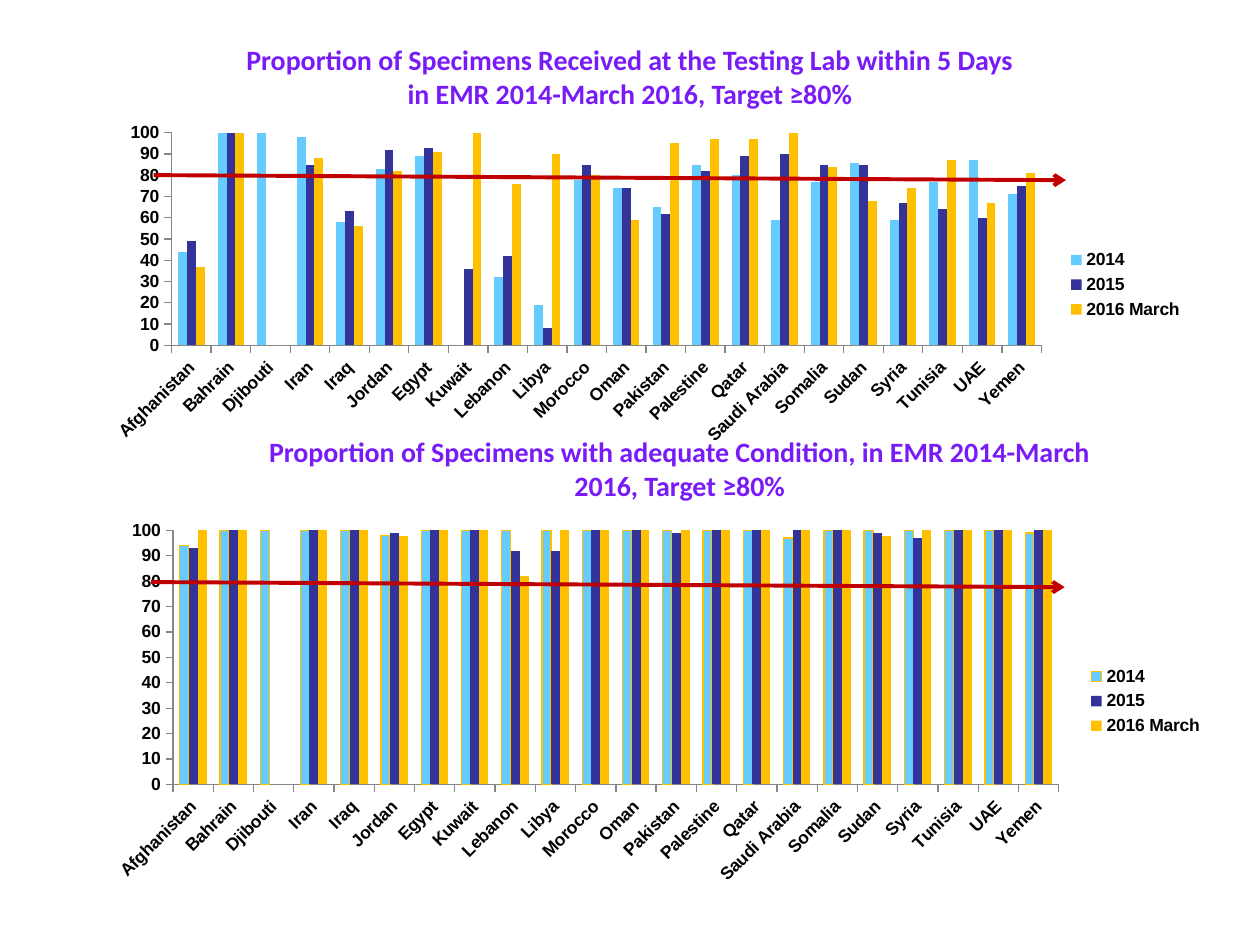
from lxml import etree
from pptx import Presentation
from pptx.chart.data import CategoryChartData
from pptx.dml.color import RGBColor
from pptx.enum.chart import XL_CHART_TYPE, XL_LEGEND_POSITION, XL_TICK_MARK
from pptx.enum.shapes import MSO_CONNECTOR
from pptx.enum.text import MSO_ANCHOR, PP_ALIGN
from pptx.oxml import parse_xml
from pptx.oxml.ns import nsdecls, qn
from pptx.util import Inches, Pt

COUNTRIES = ["Afghanistan", "Bahrain", "Djibouti", "Iran", "Iraq", "Jordan", "Egypt", "Kuwait",
             "Lebanon", "Libya", "Morocco", "Oman", "Pakistan", "Palestine", "Qatar",
             "Saudi Arabia", "Somalia", "Sudan", "Syria", "Tunisia", "UAE", "Yemen"]
YEARS = {"2014": "66CCFF", "2015": "333399", "2016 March": "FFC000"}
PURPLE, RED, GREY = "791BF7", "C00000", "868686"

# Boxes are left, top, width, height in inches; plots are shares of the chart.
PANELS = [
    dict(
        title=["Proportion of Specimens Received at the Testing Lab within 5 Days",
               "in EMR 2014-March 2016, Target ≥80%"],
        title_box=(0.5, 0.3, 9, 0.61), anchor=MSO_ANCHOR.MIDDLE,
        chart_box=(0.75, 0.92, 8.74, 2.68), plot=(0.07, 0.05, 0.79, 0.63),
        target=(1.22, 1.39, 8.46, 1.43), outline=None,
        values=[
            [44, 100, 100, 98, 58, 83, 89, None, 32, 19, 78,
             74, 65, 85, 80, 59, 77, 86, 59, 77, 87, 71],
            [49, 100, None, 85, 63, 92, 93, 36, 42, 8, 85,
             74, 62, 82, 89, 90, 85, 85, 67, 64, 60, 75],
            [37, 100, None, 88, 56, 82, 91, 100, 76, 90, 80,
             59, 95, 97, 97, 100, 84, 68, 74, 87, 67, 81],
        ]),
    dict(
        title=["Proportion of Specimens with adequate Condition, in EMR 2014-March 2016, Target ≥80%"],
        title_box=(1.93, 3.4, 6.93, 0.91), anchor=MSO_ANCHOR.TOP,
        chart_box=(0.75, 4.06, 8.9, 3.01), plot=(0.07, 0.05, 0.79, 0.67),
        target=(1.2, 4.62, 8.45, 4.66), outline="FFC000",
        values=[
            [94, 100, 100, 100, 100, 98, 100, 100, 100, 100, 100,
             100, 100, 100, 100, 97, 100, 100, 100, 100, 100, 99],
            [93, 100, None, 100, 100, 99, 100, 100, 92, 92, 100,
             100, 99, 100, 100, 100, 100, 99, 97, 100, 100, 100],
            [100, 100, None, 100, 100, 98, 100, 100, 82, 100, 100,
             100, 100, 100, 100, 100, 100, 98, 100, 100, 100, 100],
        ]),
]


def rgb(color):
    return RGBColor.from_string(color)


def inches(values):
    return [Inches(v) for v in values]


def format_font(font, name, size, color):
    font.name, font.size, font.bold = name, Pt(size), True
    font.color.rgb = rgb(color)


def add_text(s, lines, box, font="Calibri", size=16, color=PURPLE, anchor=MSO_ANCHOR.TOP):
    tf = s.shapes.add_textbox(*inches(box)).text_frame
    tf.word_wrap = True
    tf.vertical_anchor = anchor
    for i, line in enumerate(lines):
        p = tf.add_paragraph() if i else tf.paragraphs[0]
        p.alignment = PP_ALIGN.CENTER
        r = p.add_run()
        r.text = line
        format_font(r.font, font, size, color)


def set_plot_layout(chart, plot):
    """Fix the inner plot area as shares of the chart: x, y, w, h."""
    area = chart._chartSpace.chart.plotArea
    for old in area.findall(qn("c:layout")):
        area.remove(old)
    sizes = "".join(f'<c:{tag} val="{v}"/>' for tag, v in zip("xywh", plot))
    area.insert(0, parse_xml(
        f'<c:layout {nsdecls("c")}><c:manualLayout><c:layoutTarget val="inner"/>'
        f'<c:xMode val="edge"/><c:yMode val="edge"/>{sizes}</c:manualLayout></c:layout>'))


def add_column_chart(s, box, values, plot, outline):
    data = CategoryChartData()
    data.categories = COUNTRIES
    for year, row in zip(YEARS, values):
        data.add_series(year, row)
    chart = s.shapes.add_chart(XL_CHART_TYPE.COLUMN_CLUSTERED, *inches(box), data).chart
    format_font(chart.font, "Arial", 10, "000000")
    chart.has_title = False
    chart.has_legend = True
    chart.legend.position = XL_LEGEND_POSITION.RIGHT
    chart.legend.include_in_layout = False

    columns = chart.plots[0]
    columns.gap_width, columns.overlap, columns.vary_by_categories = 150, 0, False
    for series, color in zip(columns.series, YEARS.values()):
        series.format.fill.solid()
        series.format.fill.fore_color.rgb = rgb(color)
        series.invert_if_negative = False
    if outline:
        line = columns.series[0].format.line
        line.color.rgb, line.width = rgb(outline), Pt(0.75)

    for axis in (chart.category_axis, chart.value_axis):
        axis.has_major_gridlines = False
        axis.major_tick_mark = XL_TICK_MARK.OUTSIDE
        axis.format.line.color.rgb = rgb(GREY)
        axis.format.line.width = Pt(0.75)
        format_font(axis.tick_labels.font, "Arial", 10, "000000")
    chart.category_axis._element.txPr.bodyPr.set("rot", "-2700000")
    value_axis = chart.value_axis
    value_axis.minimum_scale, value_axis.maximum_scale, value_axis.major_unit = 0, 100, 10
    set_plot_layout(chart, plot)


def add_arrow(s, ends, color=RED, width=2.25):
    arrow = s.shapes.add_connector(MSO_CONNECTOR.STRAIGHT, *inches(ends))
    arrow.line.color.rgb, arrow.line.width = rgb(color), Pt(width)
    etree.SubElement(arrow.line._get_or_add_ln(), qn("a:tailEnd"), type="arrow")
    etree.SubElement(arrow._element.spPr, qn("a:effectLst"))


def main():
    prs = Presentation()
    prs.slide_width, prs.slide_height = inches((10, 7.5))
    s = prs.slides.add_slide(prs.slide_layouts[6])
    for panel in PANELS:
        add_column_chart(s, panel["chart_box"], panel["values"], panel["plot"], panel["outline"])
        add_text(s, panel["title"], panel["title_box"], anchor=panel["anchor"])
        add_arrow(s, panel["target"])
    prs.save("out.pptx")


if __name__ == "__main__":
    main()
